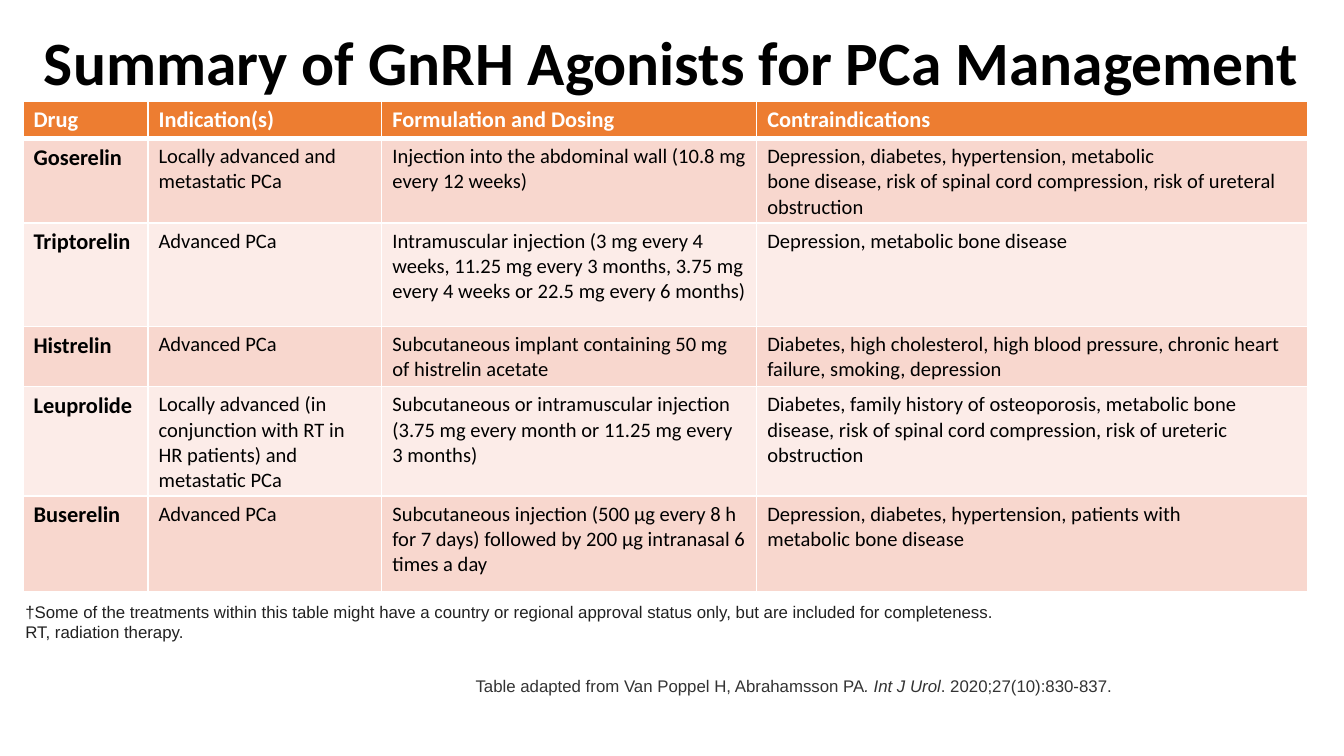
from lxml.etree import SubElement
from pptx import Presentation
from pptx.dml.color import RGBColor
from pptx.enum.text import MSO_ANCHOR, PP_ALIGN
from pptx.oxml.ns import qn
from pptx.util import Inches, Pt


def write(frame, paragraphs, font="Calibri", size=11, color="000000", bold=False,
          align=None, spacing=None, margins=None, anchor=None):
    """Fill a text frame; each paragraph is a list of (text, italic) runs or a string."""
    frame.word_wrap = True
    if anchor is not None:
        frame.vertical_anchor = anchor
    if margins:
        frame.margin_left = frame.margin_right = Inches(margins[0])
        frame.margin_top = frame.margin_bottom = Inches(margins[1])
    for number, content in enumerate(paragraphs):
        paragraph = frame.add_paragraph() if number else frame.paragraphs[0]
        paragraph.alignment = align
        paragraph.line_spacing = spacing
        for text, italic in [(content, False)] if isinstance(content, str) else content:
            run = paragraph.add_run()
            run.text = text
            run.font.name = font
            run.font.size = Pt(size)
            run.font.bold = bold
            run.font.italic = italic
            run.font.color.rgb = RGBColor.from_string(color)


def add_border(cell, side, width):
    line = SubElement(cell._tc.get_or_add_tcPr(), qn(f"a:ln{side}"), w=str(Pt(width)))
    SubElement(SubElement(line, qn("a:solidFill")), qn("a:srgbClr"), val="FFFFFF")


presentation = Presentation()
presentation.slide_width = Inches(10)
presentation.slide_height = Inches(10) * 9 // 16
slide = presentation.slides.add_slide(presentation.slide_layouts[6])

title = slide.shapes.add_textbox(Inches(0.1), Inches(0.19), Inches(9.79), Inches(0.59))
write(title.text_frame, ["Summary of GnRH Agonists for PCa Management"], size=33, bold=True,
      align=PP_ALIGN.CENTER, spacing=0.9, margins=(0.07, 0.04), anchor=MSO_ANCHOR.MIDDLE)

citation = slide.shapes.add_textbox(Inches(3.44), Inches(4.98), Inches(6.56), Inches(0.25))
write(citation.text_frame,
      [[("Table adapted from Van Poppel H, Abrahamsson PA", False),
        (". Int J Urol", True),
        (". 2020;27(10):830-837.", False)]],
      font="Arial", size=9, color="333333")

footnote = slide.shapes.add_textbox(Inches(0.09), Inches(4.43), Inches(9.81), Inches(0.4))
write(footnote.text_frame,
      ["†Some of the treatments within this table might have a country or regional "
       "approval status only, but are included for completeness.",
       "RT, radiation therapy."],
      font="Arial", size=9, color="212121")

agonists = [
    ("Drug", "Indication(s)", "Formulation and Dosing", "Contraindications"),
    ("Goserelin", "Locally advanced and metastatic PCa",
     "Injection into the abdominal wall (10.8 mg every 12 weeks)",
     "Depression, diabetes, hypertension, metabolic\n"
     "bone disease, risk of spinal cord compression, risk of ureteral obstruction"),
    ("Triptorelin", "Advanced PCa",
     "Intramuscular injection (3 mg every 4 weeks, 11.25 mg every 3 months, "
     "3.75 mg every 4 weeks or 22.5 mg every 6 months)",
     "Depression, metabolic bone disease"),
    ("Histrelin", "Advanced PCa",
     "Subcutaneous implant containing 50 mg of histrelin acetate",
     "Diabetes, high cholesterol, high blood pressure, chronic heart failure, "
     "smoking, depression"),
    ("Leuprolide", "Locally advanced (in conjunction with RT in HR patients) and metastatic PCa",
     "Subcutaneous or intramuscular injection (3.75 mg every month or 11.25 mg every 3 months)",
     "Diabetes, family history of osteoporosis, metabolic bone disease, "
     "risk of spinal cord compression, risk of ureteric obstruction"),
    ("Buserelin", "Advanced PCa",
     "Subcutaneous injection (500 μg every 8 h for 7 days) followed by "
     "200 μg intranasal 6 times a day",
     "Depression, diabetes, hypertension, patients with\nmetabolic bone disease"),
]
column_widths = [0.93, 1.74, 2.79, 4.1]
row_heights = [0.28, 0.6, 0.77, 0.42, 0.77, 0.71]

drug_table = slide.shapes.add_table(
    len(row_heights), len(column_widths), Inches(0.17), Inches(0.75),
    Inches(sum(column_widths)), Inches(sum(row_heights))).table
for column, width in zip(drug_table.columns, column_widths):
    column.width = Inches(width)
for row, height in zip(drug_table.rows, row_heights):
    row.height = Inches(height)

for r, agonist in enumerate(agonists):
    header = r == 0
    band = "ED7D31" if header else "F8D7CE" if r % 2 else "FCECE8"
    for c, text in enumerate(agonist):
        cell = drug_table.cell(r, c)
        label = header or c == 0
        cell.margin_left = Inches(0.08)
        cell.margin_right = Inches(0.07)
        cell.margin_top = cell.margin_bottom = Inches(0.04)
        # The rule between the header and the first drug is thicker
        for side, width in zip("LRTB", (1, 1, 3 if r == 1 else 1, 3 if header else 1)):
            add_border(cell, side, width)
        cell.fill.solid()
        cell.fill.fore_color.rgb = RGBColor.from_string(band)
        write(cell.text_frame, text.split("\n"), size=12 if label else 11, bold=label,
              color="FFFFFF" if header else "000000")

presentation.save("out.pptx")
